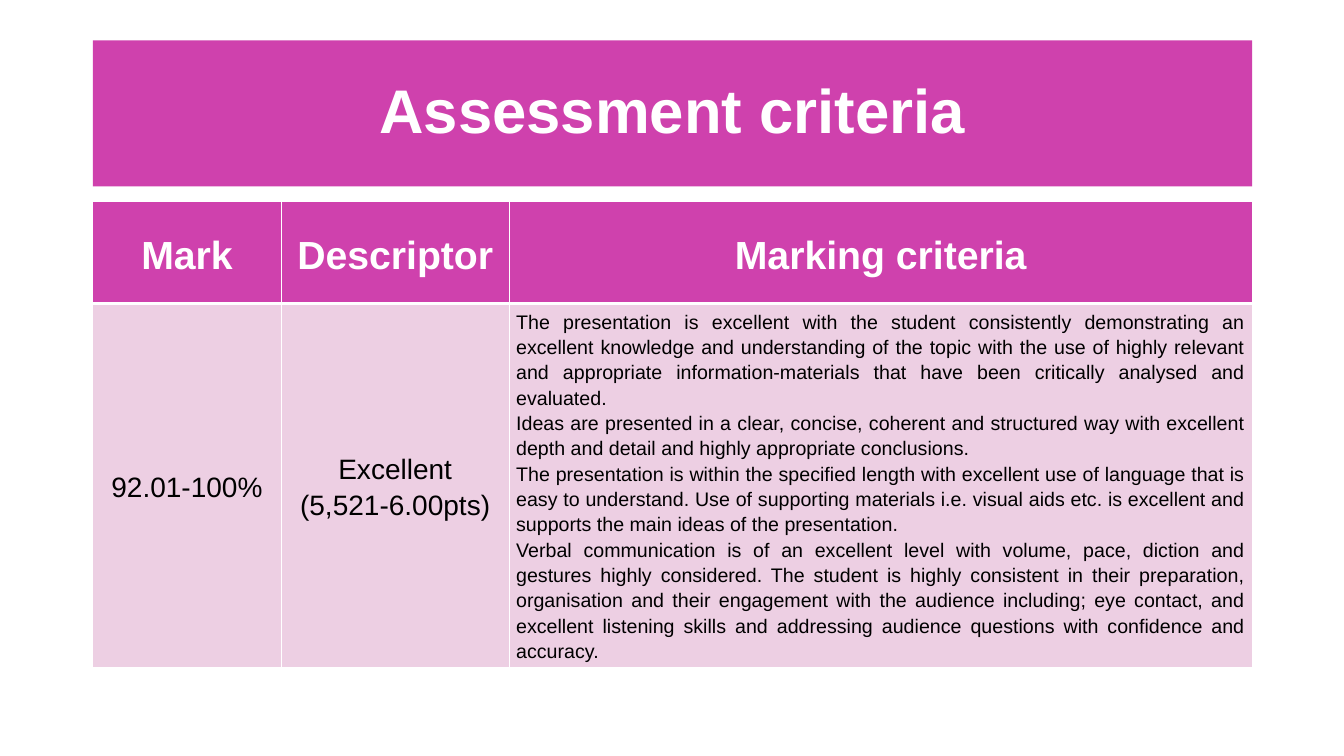
from dataclasses import dataclass

from lxml import etree
from pptx import Presentation
from pptx import util as u
from pptx.dml.color import RGBColor
from pptx.enum import text
from pptx.oxml.ns import qn


@dataclass(frozen=True)
class Theme:
    font: str = "Arial"
    accent: str = "CF41AD"
    tint: str = "EDCFE3"
    light: str = "FFFFFF"
    dark: str = "000000"
    title: int = 44
    heading: int = 28
    label: int = 20
    body: int = 14


CENTER = text.PP_ALIGN.CENTER
JUSTIFY = text.PP_ALIGN.JUSTIFY

HEADINGS = ["Mark", "Descriptor", "Marking criteria"]
MARK = ["92.01-100%"]
DESCRIPTOR = ["Excellent", "(5,521-6.00pts)"]
CRITERIA = [
    "The presentation is excellent with the student consistently demonstrating an "
    "excellent knowledge and understanding of the topic with the use of highly relevant "
    "and appropriate information-materials that have been critically analysed and "
    "evaluated. ",
    "Ideas are presented in a clear, concise, coherent and structured way with excellent "
    "depth and detail and highly appropriate conclusions. ",
    "The presentation is within the specified length with excellent use of language that "
    "is easy to understand. Use of supporting materials i.e. visual aids etc. is excellent "
    "and supports the main ideas of the presentation.",
    "Verbal communication is of an excellent level with volume, pace, diction and "
    "gestures highly considered. The student is highly consistent in their preparation, "
    "organisation and their engagement with the audience including; eye contact, and "
    "excellent listening skills and addressing audience questions with confidence and "
    "accuracy.",
]


def write(tf, lines, font, size, color, bold=False, align=CENTER, spacing=1.15):
    for i, line in enumerate(lines):
        p = tf.paragraphs[0] if i == 0 else tf.add_paragraph()
        p.alignment = align
        p.line_spacing = spacing
        p.space_before = p.space_after = u.Pt(0)
        r = p.add_run()
        r.text = line
        r.font.name = font
        r.font.size = u.Pt(size)
        r.font.bold = bold
        r.font.color.rgb = RGBColor.from_string(color)


class Deck:
    def __init__(self, theme):
        self.theme = theme
        self.prs = Presentation()
        self.prs.slide_width = u.Inches(13.33)
        self.prs.slide_height = u.Inches(7.5)
        self.s = self.prs.slides.add_slide(self.prs.slide_layouts[5])

    def title(self, caption, left, top, width, height):
        t = self.theme
        sp = self.s.shapes.title
        sp.left, sp.top = u.Inches(left), u.Inches(top)
        sp.width, sp.height = u.Inches(width), u.Inches(height)
        sp.fill.solid()
        sp.fill.fore_color.rgb = RGBColor.from_string(t.accent)
        tf = sp.text_frame
        tf.word_wrap = True
        tf.auto_size = text.MSO_AUTO_SIZE.NONE
        tf.vertical_anchor = text.MSO_ANCHOR.MIDDLE
        write(tf, [caption], t.font, t.title, t.light, bold=True, spacing=0.9)

    def table(self, left, top, widths, heights):
        frame = self.s.shapes.add_table(
            len(heights), len(widths), u.Inches(left), u.Inches(top),
            u.Inches(sum(widths)), u.Inches(sum(heights)))
        tbl = frame.table
        for col, width in zip(tbl.columns, widths):
            col.width = u.Inches(width)
        for row, height in zip(tbl.rows, heights):
            row.height = u.Inches(height)
        return tbl

    def cell(self, cell, lines, fill, size, color, top=1, bottom=1, **fmt):
        cell.margin_left = cell.margin_right = u.Inches(0.07)
        cell.margin_top = cell.margin_bottom = 0
        cell.vertical_anchor = text.MSO_ANCHOR.MIDDLE
        self.borders(cell, L=1, R=1, T=top, B=bottom)
        cell.fill.solid()
        cell.fill.fore_color.rgb = RGBColor.from_string(fill)
        write(cell.text_frame, lines, self.theme.font, size, color, **fmt)

    def borders(self, cell, **widths):
        tc_pr = cell._tc.get_or_add_tcPr()
        for side, width in widths.items():
            ln = etree.SubElement(tc_pr, qn(f"a:ln{side}"), w=str(u.Pt(width)))
            fill = etree.SubElement(ln, qn("a:solidFill"))
            etree.SubElement(fill, qn("a:srgbClr"), val=self.theme.light)

    def save(self):
        self.prs.save("out.pptx")


def main():
    t = Theme()
    deck = Deck(t)
    deck.title("Assessment criteria", 0.92, 0.4, 11.5, 1.45)
    tbl = deck.table(0.92, 2, [1.87, 2.26, 7.37], [1.01, 3.61])
    for i, heading in enumerate(HEADINGS):
        deck.cell(tbl.cell(0, i), [heading], t.accent, t.heading, t.light,
                  bottom=3, bold=True)
    for i, (lines, size, align) in enumerate([
            (MARK, t.label, CENTER),
            (DESCRIPTOR, t.label, CENTER),
            (CRITERIA, t.body, JUSTIFY)]):
        deck.cell(tbl.cell(1, i), lines, t.tint, size, t.dark, top=3, align=align)
    deck.save()


if __name__ == "__main__":
    main()
